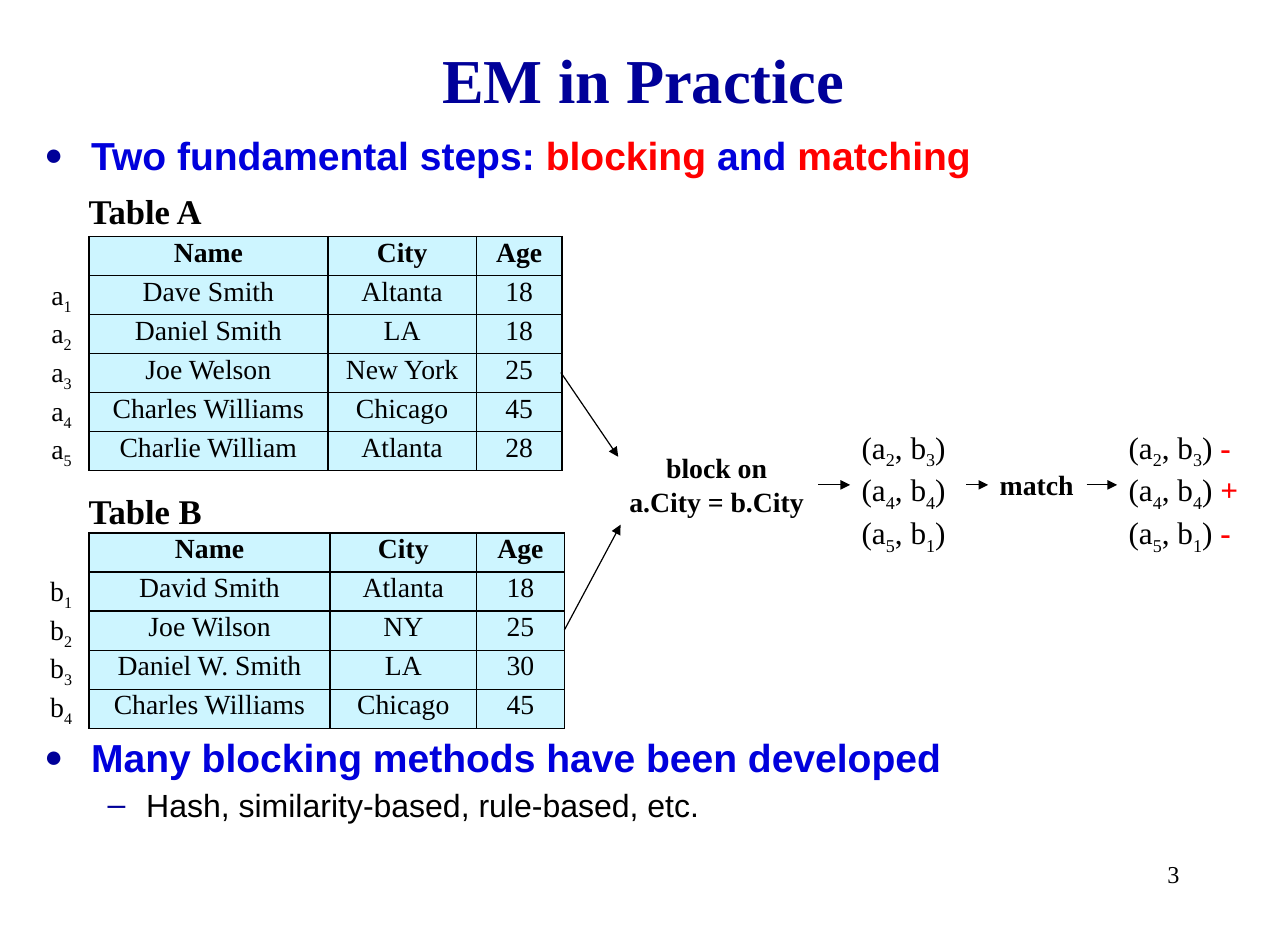
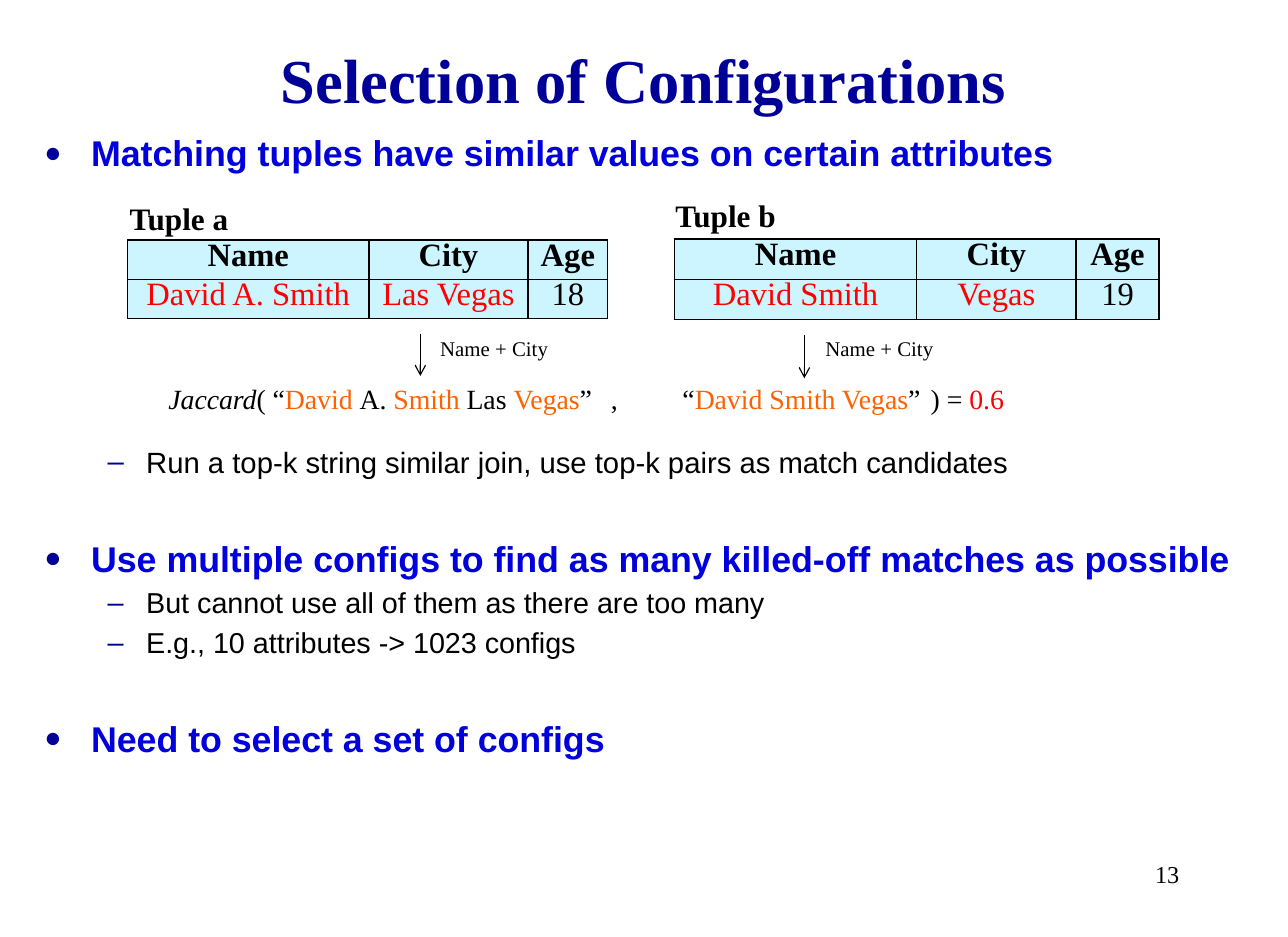
from dataclasses import dataclass

from lxml.etree import SubElement
from pptx import Presentation
from pptx.dml.color import RGBColor
from pptx.enum.shapes import MSO_CONNECTOR
from pptx.enum.text import MSO_ANCHOR, PP_ALIGN
from pptx.oxml.ns import qn
from pptx.util import Inches, Pt


@dataclass(frozen=True)
class Theme:
    serif: str = "Times New Roman"
    sans: str = "Arial"
    navy: str = "000099"
    blue: str = "0000DC"
    red: str = "FF0000"
    orange: str = "FC6204"
    black: str = "000000"
    cell: str = "CDF5FF"
    title: float = 38.4
    caption: float = 21.3
    pairs: float = 19.2
    label: float = 17.1
    number: float = 14.9
    small: float = 12.8


theme = Theme()


def add_runs(paragraph, runs, size, color=theme.black, font=theme.serif, bold=False):
    """Append runs; each is a string or (string, styles), such as ("2", "sub")."""
    for item in runs:
        text, styles = (item, "") if isinstance(item, str) else item
        styles = styles.split()
        run = paragraph.add_run()
        run.text = text
        run.font.name, run.font.size = font, Pt(size)
        run.font.bold = bold or "bold" in styles
        run.font.italic = "italic" in styles
        accents = [getattr(theme, name) for name in ("red", "orange") if name in styles]
        run.font.color.rgb = RGBColor.from_string(accents[0] if accents else color)
        if "sub" in styles:
            run._r.get_or_add_rPr().set("baseline", "-25000")


def add_label(slide, left, top, width, height, paragraphs, size, align=PP_ALIGN.LEFT, **style):
    box = slide.shapes.add_textbox(Inches(left), Inches(top), Inches(width), Inches(height))
    frame = box.text_frame
    frame.word_wrap = True
    for index, runs in enumerate(paragraphs):
        paragraph = frame.add_paragraph() if index else frame.paragraphs[0]
        paragraph.alignment = align
        add_runs(paragraph, runs, size, **style)
    return box


presentation = Presentation()
presentation.slide_width, presentation.slide_height = Inches(11), Inches(8)

# Titles, page numbers and bullets: each block is (top, [(level, size, runs)])
outlines = [
    ("EM in Practice", "3", [
        (1.07, [(0, 24, ["Two fundamental steps: ", ("blocking", "red"), " and ", ("matching", "red")])]),
        (6.21, [(0, 24, ["Many blocking methods have been developed"]),
                (1, 19.7, ["Hash, similarity-based, rule-based, etc."])]),
    ]),
    ("Selection of Configurations", "13", [
        (1.07, [(0, 22, ["Matching tuples have similar values on certain attributes"])]),
        (3.74, [(1, 18, ["Run a top-k string similar join, use top-k pairs as match candidates"])]),
        (4.53, [(0, 22, ["Use multiple configs to find as many killed-off matches as possible"]),
                (1, 17.7, ["But cannot use all of them as there are too many"]),
                (1, 17.7, ["E.g., 10 attributes -> 1023 configs"])]),
        (6.07, [(0, 22, ["Need to select a set of configs"])]),
    ]),
]
# Per level: left indent, first-line indent, bullet, bullet size, text colour, bold
levels = [(0.4, -0.4, "●", "80000", theme.blue, True),
          (0.87, -0.33, "–", "100000", theme.black, False)]

for title, number, blocks in outlines:
    slide = presentation.slides.add_slide(presentation.slide_layouts[6])
    heading = add_label(slide, 0.82, 0.27, 9.35, 0.8, [[title]], theme.title,
                        align=PP_ALIGN.CENTER, color=theme.navy, bold=True)
    heading.text_frame.vertical_anchor = MSO_ANCHOR.MIDDLE
    add_label(slide, 7.88, 7.29, 2.29, 0.53, [[number]], theme.number, align=PP_ALIGN.RIGHT)
    for top, bullets in blocks:
        box = slide.shapes.add_textbox(Inches(0.28), Inches(top), Inches(10.45), Inches(0.1 + 0.4 * len(bullets)))
        frame = box.text_frame
        frame.word_wrap = True
        for index, (level, size, runs) in enumerate(bullets):
            left, first_line, bullet, bullet_size, color, bold = levels[level]
            paragraph = frame.add_paragraph() if index else frame.paragraphs[0]
            paragraph.level = level
            paragraph.space_before = Pt(3.5 if index else 0)
            properties = paragraph._p.get_or_add_pPr()
            properties.set("marL", str(Inches(left)))
            properties.set("indent", str(Inches(first_line)))
            SubElement(SubElement(properties, qn("a:buClr")), qn("a:srgbClr"), val=theme.navy)
            SubElement(properties, qn("a:buSzPct"), val=bullet_size)
            SubElement(properties, qn("a:buFont"), typeface=theme.sans)
            SubElement(properties, qn("a:buChar"), char=bullet)
            add_runs(paragraph, runs, size, color, theme.sans, bold)

practice, selection = presentation.slides

# Tables: slide, left, top, height, column widths, type size, line spacing, rows
header = ("Name", "City", "Age")
tables = [
    (practice, 0.76, 2.02, 2.0, (2.04, 1.27, 0.73), 17, 0.8, [
        header,
        ("Dave Smith", "Altanta", "18"),
        ("Daniel Smith", "LA", "18"),
        ("Joe Welson", "New York", "25"),
        ("Charles Williams", "Chicago", "45"),
        ("Charlie William", "Atlanta", "28")]),
    (practice, 0.76, 4.55, 1.67, (2.06, 1.25, 0.75), 17, 0.8, [
        header,
        ("David Smith", "Atlanta", "18"),
        ("Joe Wilson", "NY", "25"),
        ("Daniel W. Smith", "LA", "30"),
        ("Charles Williams", "Chicago", "45")]),
    (selection, 1.09, 2.05, 0.65, (2.06, 1.36, 0.68), 20, 0.7, [
        header,
        (("David A. Smith", "red"), ("Las Vegas", "red"), "18")]),
    (selection, 5.76, 2.04, 0.69, (2.07, 1.36, 0.71), 20, 0.7, [
        header,
        (("David Smith", "red"), ("Vegas", "red"), "19")]),
]
for slide, left, top, height, widths, size, spacing, rows in tables:
    table = slide.shapes.add_table(len(rows), len(widths), Inches(left), Inches(top),
                                   Inches(sum(widths)), Inches(height)).table
    table.first_row = table.horz_banding = False
    for column, width in zip(table.columns, widths):
        column.width = Inches(width)
    for row_index, values in enumerate(rows):
        for column_index, value in enumerate(values):
            cell = table.cell(row_index, column_index)
            cell.margin_left = cell.margin_right = Inches(0.08)
            cell.margin_top = cell.margin_bottom = Inches(0.05)
            paragraph = cell.text_frame.paragraphs[0]
            paragraph.alignment, paragraph.line_spacing = PP_ALIGN.CENTER, spacing
            add_runs(paragraph, [value], size, bold=row_index == 0)
            for side in ("a:lnL", "a:lnR", "a:lnT", "a:lnB"):
                border = SubElement(cell._tc.get_or_add_tcPr(), qn(side), w=str(Pt(1)))
                SubElement(SubElement(border, qn("a:solidFill")), qn("a:srgbClr"), val=theme.black)
            cell.fill.solid()
            cell.fill.fore_color.rgb = RGBColor.from_string(theme.cell)

for slide, left, top, caption, size in [
        (practice, 0.66, 1.57, "Table A", theme.caption),
        (practice, 0.66, 4.13, "Table B", theme.caption),
        (selection, 1.01, 1.65, "Tuple a", theme.pairs),
        (selection, 5.67, 1.63, "Tuple b", theme.pairs)]:
    add_label(slide, left, top, 1.5, 0.45, [[caption]], size, bold=True)

# Row names beside the two tables
for letter, left, first_top, count in [("a", 0.34, 2.32, 5), ("b", 0.33, 4.85, 4)]:
    for index in range(count):
        add_label(practice, left, first_top + 0.33 * index, 0.62, 0.39,
                  [[letter, (str(index + 1), "sub")]], theme.label)

# Blocking and matching steps, all centred on one axis
axis = 4.14
candidates, matches = [], []
for a_row, b_row, verdict in [("2", "3", "-"), ("4", "4", "+"), ("5", "1", "-")]:
    pair = ["(a", (a_row, "sub"), ", b", (b_row, "sub")]
    candidates.append(pair + [")"])
    matches.append(pair + [") ", (verdict, "red bold")])
steps = [
    add_label(practice, left, axis - height / 2, width, height, paragraphs, size, align=align, bold=bold)
    for left, width, height, paragraphs, size, bold, align in [
        (5.25, 1.74, 0.68, [["block on"], ["a.City = b.City"]], theme.label, True, PP_ALIGN.CENTER),
        (7.26, 0.99, 1.07, candidates, theme.pairs, False, PP_ALIGN.LEFT),
        (8.44, 0.84, 0.39, [["match"]], theme.label, True, PP_ALIGN.LEFT),
        (9.54, 1.4, 1.07, matches, theme.pairs, False, PP_ALIGN.LEFT)]]

# Similarity of the two tuples
for left in (3.66, 6.95):
    add_label(selection, left, 2.82, 1.3, 0.32, [["Name + City"]], theme.small)
tuple_a = ["“", ("David ", "orange"), "A. ", ("Smith", "orange"), " Las ", ("Vegas", "orange"), "”"]
tuple_b = ["“", ("David Smith Vegas", "orange"), "”"]
for left, width, runs in [
        (1.34, 1.1, [("Jaccard", "italic"), "("]),
        (2.23, 2.99, tuple_a),
        (5.12, 0.4, [","]),
        (5.73, 2.29, tuple_b),
        (7.85, 1.2, [") = ", ("0.6", "red")])]:
    add_label(selection, left, 3.21, width, 0.39, [runs], theme.label)

# Arrows
arrows = []
for slide, start_x, start_y, end_x, end_y, head in [
        (practice, 4.79, 3.18, 5.28, 3.9, "triangle"),
        (practice, 4.82, 5.38, 5.3, 4.48, "triangle"),
        (selection, 3.59, 2.85, 3.59, 3.21, "arrow"),
        (selection, 6.87, 2.86, 6.87, 3.23, "arrow")]:
    arrows.append((slide.shapes.add_connector(
        MSO_CONNECTOR.STRAIGHT, Inches(start_x), Inches(start_y), Inches(end_x), Inches(end_y)), head))
for source, target in zip(steps, steps[1:]):
    arrow = practice.shapes.add_connector(MSO_CONNECTOR.STRAIGHT, 0, 0, 0, 0)
    arrow.begin_connect(source, 3)
    arrow.end_connect(target, 1)
    arrows.append((arrow, "triangle"))
for arrow, head in arrows:
    arrow.line.width = Pt(0.75)
    arrow.line.color.rgb = RGBColor.from_string(theme.black)
    SubElement(arrow.line._get_or_add_ln(), qn("a:tailEnd"), type=head)
    SubElement(arrow._element.spPr, qn("a:effectLst"))

presentation.save("out.pptx")
